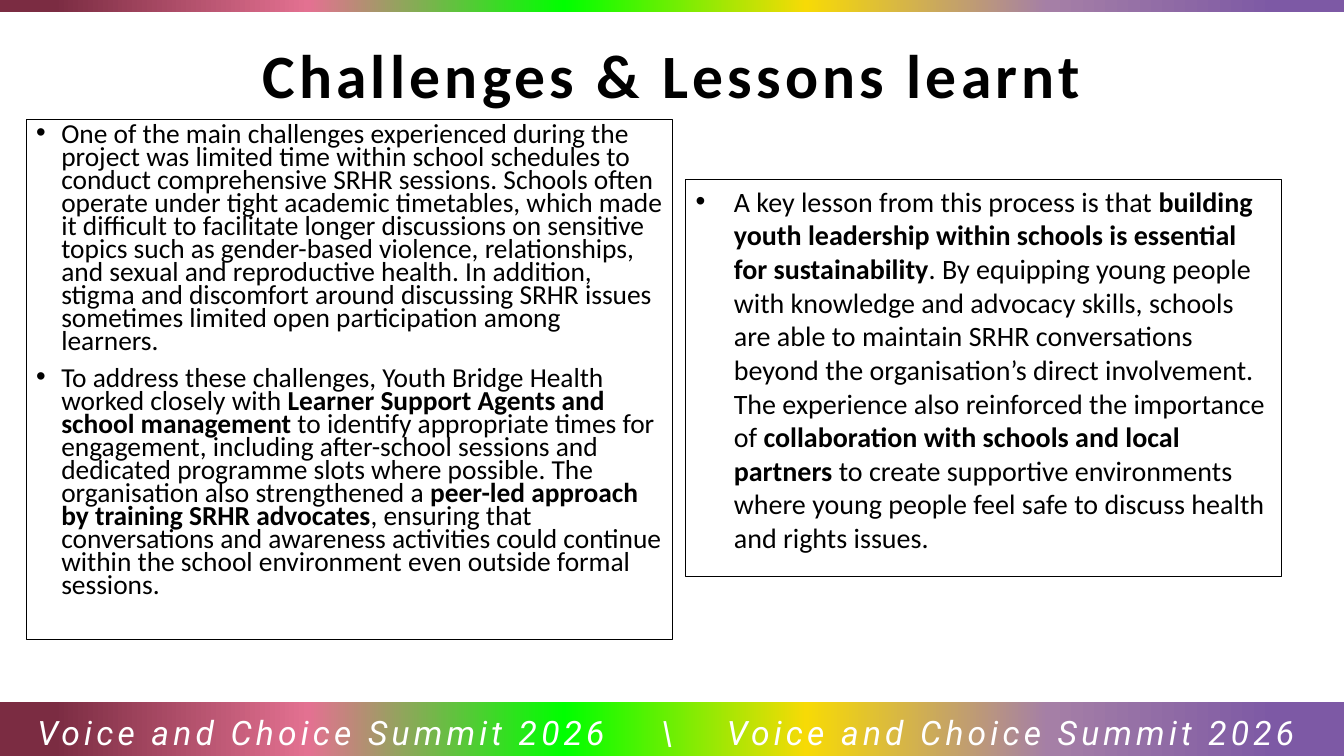
from lxml import etree
from pptx import Presentation
from pptx.dml.color import RGBColor as RGB
from pptx.enum.shapes import MSO_SHAPE as Shape
from pptx.enum.text import MSO_ANCHOR as Anchor, PP_ALIGN as Align
from pptx.oxml import parse_xml
from pptx.oxml.ns import nsdecls, qn
from pptx.util import Inches, Pt

WIDE, HIGH = 13.33, 7.5
BLACK = RGB(0, 0, 0)
WHITE = RGB(255, 255, 255)
STOPS = [
    (5, RGB(0x7D, 0x59, 0xA5)),
    (22, RGB(0xA5, 0x7F, 0xA6)),
    (40, RGB(0xF7, 0xDA, 0x06)),
    (58, RGB(0x00, 0xFF, 0x00)),
    (77, RGB(0xE3, 0x71, 0x91)),
    (96, RGB(0x7B, 0x2C, 0x42)),
]
BANDS = [(0, 0.12), (6.96, 0.57)]
TITLE = "Challenges & Lessons learnt"
EVENT = "Voice and Choice Summit 2026"
FOOTER = f"{EVENT}\t\\\t{EVENT}"
TABS = [6.18, 6.84]

LESSONS = [[
    ("A key lesson from this process is that ", False),
    ("building youth leadership within schools is essential for sustainability", True),
    (". By equipping young people with knowledge and advocacy skills, schools are able "
     "to maintain SRHR conversations beyond the organisation’s direct involvement. The "
     "experience also reinforced the importance of ", False),
    ("collaboration with schools and local partners", True),
    (" to create supportive environments where young people feel safe to discuss health "
     "and rights issues.", False),
]]
ISSUES = [
    [("One of the main challenges experienced during the project was limited time within "
      "school schedules to conduct comprehensive SRHR sessions. Schools often operate under "
      "tight academic timetables, which made it difficult to facilitate longer discussions on "
      "sensitive topics such as gender-based violence, relationships, and sexual and "
      "reproductive health. In addition, stigma and discomfort around discussing SRHR issues "
      "sometimes limited open participation among learners.", False)],
    [("To address these challenges, Youth Bridge Health worked closely with ", False),
     ("Learner Support Agents and school management", True),
     (" to identify appropriate times for engagement, including after-school sessions and "
      "dedicated programme slots where possible. The organisation also strengthened a ", False),
     ("peer-led approach by training SRHR advocates", True),
     (", ensuring that conversations and awareness activities could continue within the "
      "school environment even outside formal sessions.", False)],
]
PANELS = [
    ((6.8, 1.78, 5.91, 3.94), LESSONS, 20, 0.38, 1),
    ((0.26, 1.19, 6.41, 5.15), ISSUES, 19.6, 0.25, 0.7),
]


def style(run, face, size, color):
    font = run.font
    font.name, font.size = face, Pt(size)
    font.color.rgb = color
    return font


def space(run, points):
    run.font._element.set("spc", str(points * 100))


def band(top, tall):
    bar = slide.shapes.add_shape(
        Shape.RECTANGLE, 0, Inches(top), Inches(WIDE), Inches(tall))
    bar.shadow.inherit = False
    bar.line.fill.background()
    bar.fill.gradient()
    bar.fill.gradient_angle = 180
    stops = bar._element.spPr.find(qn("a:gradFill")).find(qn("a:gsLst"))
    for stop in list(stops):
        stops.remove(stop)
    for at, color in STOPS:
        stop = etree.SubElement(stops, qn("a:gs"), pos=str(at * 1000))
        etree.SubElement(stop, qn("a:srgbClr"), val=str(color))


def label(top, tall, text, face, size, color):
    box = slide.shapes.add_textbox(0, Inches(top), Inches(WIDE), Inches(tall))
    frame = box.text_frame
    frame.word_wrap = True
    frame.text = text
    para = frame.paragraphs[0]
    run = para.runs[0]
    font = style(run, face, size, color)
    space(run, 3)
    return frame, para, font


def panel(area, items, size, indent, pitch):
    box = slide.shapes.add_shape(Shape.RECTANGLE, *map(Inches, area))
    box.shadow.inherit = False
    box.fill.background()
    box.line.color.rgb = BLACK
    box.line.width = Pt(0.75)
    frame = box.text_frame
    frame.word_wrap = True
    frame.vertical_anchor = Anchor.TOP
    for i, parts in enumerate(items):
        para = frame.add_paragraph() if i else frame.paragraphs[0]
        para.alignment = Align.LEFT
        para.line_spacing = pitch
        if i:
            para.space_before = Pt(10)
        props = para._p.get_or_add_pPr()
        props.set("marL", str(Inches(indent)))
        props.set("indent", str(-Inches(indent)))
        etree.SubElement(props, qn("a:buFont"), typeface="Arial")
        etree.SubElement(props, qn("a:buChar"), char="•")
        for text, bold in parts:
            run = para.add_run()
            run.text = text
            style(run, "Calibri", size, BLACK).bold = bold


deck = Presentation()
deck.slide_width, deck.slide_height = Inches(WIDE), Inches(HIGH)
slide = deck.slides.add_slide(deck.slide_layouts[6])

for top, tall in BANDS:
    band(top, tall)

frame, para, font = label(0.27, 0.92, TITLE, "Calibri", 44, BLACK)
frame.vertical_anchor = Anchor.MIDDLE
para.alignment = Align.CENTER
font.bold = True
font._element.insert(0, parse_xml(
    f'<a:ln {nsdecls("a")} w="{Pt(0.75)}"><a:solidFill>'
    f'<a:srgbClr val="{BLACK}"/></a:solidFill></a:ln>'))

frame, para, font = label(6.99, 0.49, FOOTER, "Roboto", 24, WHITE)
frame.margin_left = Inches(0.37)
frame.margin_right = 0
para.line_spacing = 1.07
tabs = etree.SubElement(para._p.get_or_add_pPr(), qn("a:tabLst"))
for at in TABS:
    etree.SubElement(tabs, qn("a:tab"), pos=str(Inches(at)), algn="l")
for run in para.runs:
    style(run, "Roboto", 24, WHITE).italic = True
    space(run, 3)

for part in PANELS:
    panel(*part)

deck.save("out.pptx")
